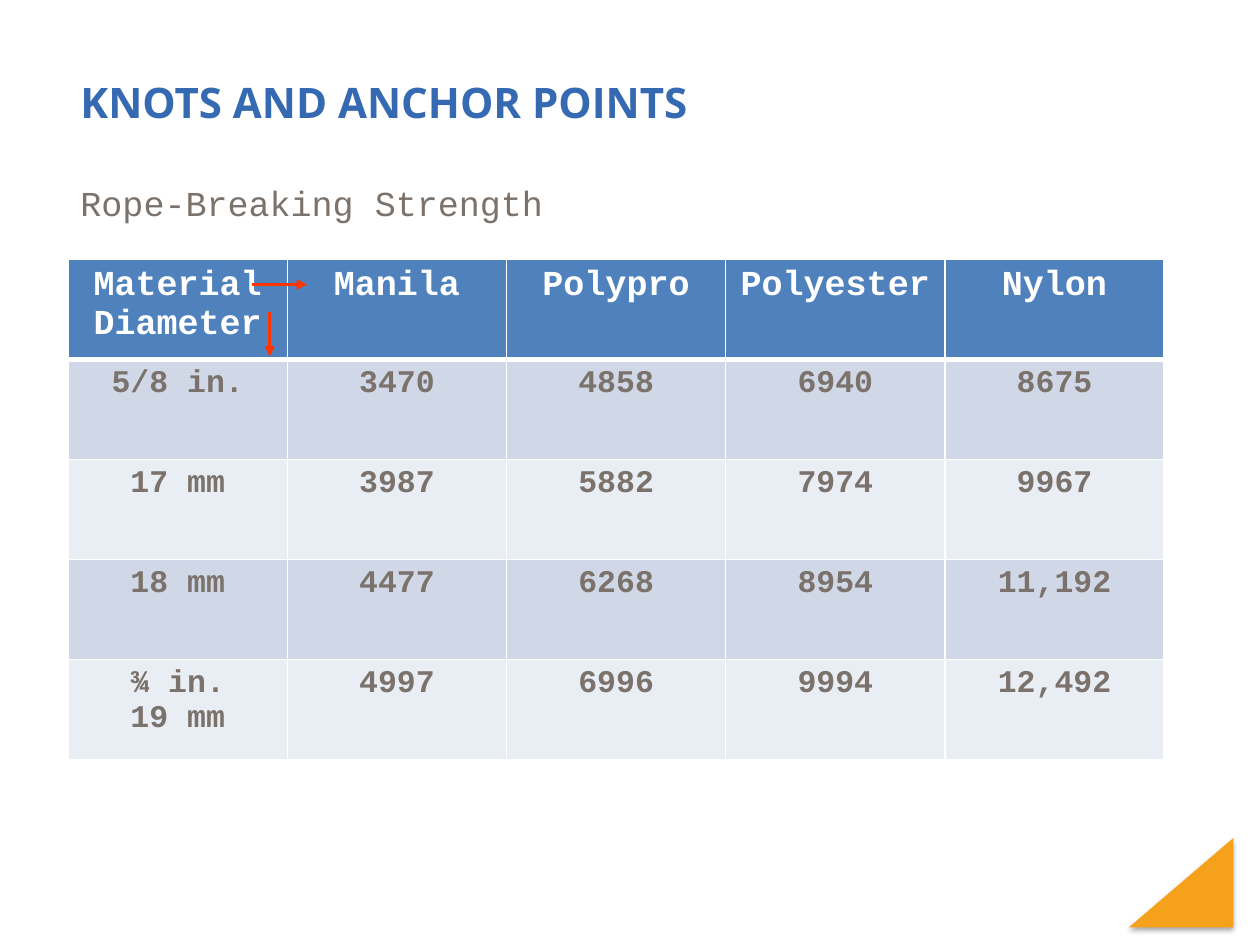
from dataclasses import dataclass

from lxml.etree import SubElement
from pptx import Presentation
from pptx.dml.color import RGBColor
from pptx.enum.shapes import MSO_CONNECTOR, MSO_SHAPE
from pptx.enum.text import MSO_ANCHOR, PP_ALIGN
from pptx.oxml.ns import qn
from pptx.util import Inches, Pt

SLIDE_W, SLIDE_H = 10, 7.5
LEFT = 0.54
TABLE_TOP, TABLE_W, TABLE_H = 2.06, 8.7, 3.97

BLUE = RGBColor(0x35, 0x69, 0xB2)
ORANGE = RGBColor(0xF6, 0xA1, 0x1C)
GREY = RGBColor(0x7B, 0x72, 0x6B)
RED = RGBColor(0xFF, 0x33, 0x00)
WHITE = RGBColor(0xFF, 0xFF, 0xFF)
BLACK = RGBColor(0x00, 0x00, 0x00)
HEADER_FILL = RGBColor(0x4F, 0x81, 0xBD)
BAND_FILLS = (RGBColor(0xD0, 0xD8, 0xE8), RGBColor(0xE9, 0xED, 0xF4))

MONO = "Courier New"
ROWS = (
    ("Material Diameter", "Manila", "Polypro", "Polyester", "Nylon"),
    ("5/8 in.", "3470", "4858", "6940", "8675"),
    ("17 mm", "3987", "5882", "7974", "9967"),
    ("18 mm", "4477", "6268", "8954", "11,192"),
    ("¾ in.\n19 mm", "4997", "6996", "9994", "12,492"),
)


@dataclass(frozen=True)
class Arrow:
    """Ends of an arrow, in columns and rows of the table."""
    col1: float
    row1: float
    col2: float
    row2: float


ARROWS = (Arrow(0.84, 0.25, 1.09, 0.25), Arrow(0.92, 0.52, 0.92, 0.97))


def write(tf, text: str, *, size: float, color: RGBColor, font: str = MONO,
          bold: bool = False, align=PP_ALIGN.LEFT) -> None:
    for i, line in enumerate(text.split("\n")):
        p = tf.paragraphs[0] if i == 0 else tf.add_paragraph()
        p.alignment = align
        r = p.add_run()
        r.text = line
        r.font.name, r.font.size, r.font.bold = font, Pt(size), bold
        r.font.color.rgb = color


def add_text(slide, x: float, y: float, w: float, h: float, text: str,
             anchor=MSO_ANCHOR.TOP, **fmt) -> None:
    tf = slide.shapes.add_textbox(Inches(x), Inches(y), Inches(w), Inches(h)).text_frame
    tf.word_wrap = True
    tf.vertical_anchor = anchor
    write(tf, text, **fmt)


def set_borders(cell, top: float, bottom: float) -> None:
    """White borders; must come before the cell's fill."""
    tcPr = cell._tc.get_or_add_tcPr()
    for side, width in (("L", 1), ("R", 1), ("T", top), ("B", bottom)):
        ln = SubElement(tcPr, qn(f"a:ln{side}"), w=str(Pt(width)))
        SubElement(SubElement(ln, qn("a:solidFill")), qn("a:srgbClr"), val=str(WHITE))


def add_strength_table(slide) -> None:
    table = slide.shapes.add_table(
        len(ROWS), len(ROWS[0]), Inches(LEFT), Inches(TABLE_TOP),
        Inches(TABLE_W), Inches(TABLE_H)).table
    for i, row in enumerate(ROWS):
        header = i == 0
        for j, text in enumerate(row):
            cell = table.cell(i, j)
            set_borders(cell, top=3 if i == 1 else 1, bottom=3 if header else 1)
            cell.fill.solid()
            cell.fill.fore_color.rgb = HEADER_FILL if header else BAND_FILLS[(i - 1) % 2]
            write(cell.text_frame, text, size=20 if header else 18,
                  color=WHITE if header else GREY, bold=True, align=PP_ALIGN.CENTER)


def add_arrow(slide, arrow: Arrow) -> None:
    col_w, row_h = TABLE_W / len(ROWS[0]), TABLE_H / len(ROWS)
    cxn = slide.shapes.add_connector(
        MSO_CONNECTOR.STRAIGHT,
        Inches(LEFT + arrow.col1 * col_w), Inches(TABLE_TOP + arrow.row1 * row_h),
        Inches(LEFT + arrow.col2 * col_w), Inches(TABLE_TOP + arrow.row2 * row_h))
    cxn.line.color.rgb = RED
    cxn.line.width = Pt(1.5)
    SubElement(cxn.line._get_or_add_ln(), qn("a:tailEnd"), type="triangle")
    SubElement(cxn._element.spPr, qn("a:effectLst"))


def add_corner(slide) -> None:
    """Orange corner triangle with a soft shadow below it."""
    sp = slide.shapes.add_shape(MSO_SHAPE.RIGHT_TRIANGLE, Inches(9.02), Inches(6.59),
                                Inches(0.71), Inches(0.83))
    sp.rotation = 270
    sp.fill.solid()
    sp.fill.fore_color.rgb = ORANGE
    sp.line.fill.background()
    sp.shadow.inherit = False
    shadow = SubElement(sp._element.spPr.find(qn("a:effectLst")), qn("a:outerShdw"),
                        blurRad=str(Pt(3.1)), dist=str(Pt(1.8)),
                        dir=str(90 * 60000), rotWithShape="0")
    clr = SubElement(shadow, qn("a:srgbClr"), val=str(BLACK))
    SubElement(clr, qn("a:alpha"), val="35000")


def main() -> None:
    prs = Presentation()
    prs.slide_width, prs.slide_height = Inches(SLIDE_W), Inches(SLIDE_H)
    slide = prs.slides.add_slide(prs.slide_layouts[6])
    add_corner(slide)
    add_text(slide, LEFT, 0.18, 9.11, 1.25, "KNOTS AND ANCHOR POINTS",
             anchor=MSO_ANCHOR.MIDDLE, size=24, color=BLUE, font="Open Sans", bold=True)
    add_text(slide, LEFT, 1.39, 5.35, 0.44, "Rope-Breaking Strength", size=20, color=GREY)
    add_strength_table(slide)
    for arrow in ARROWS:
        add_arrow(slide, arrow)
    prs.save("out.pptx")


if __name__ == "__main__":
    main()
